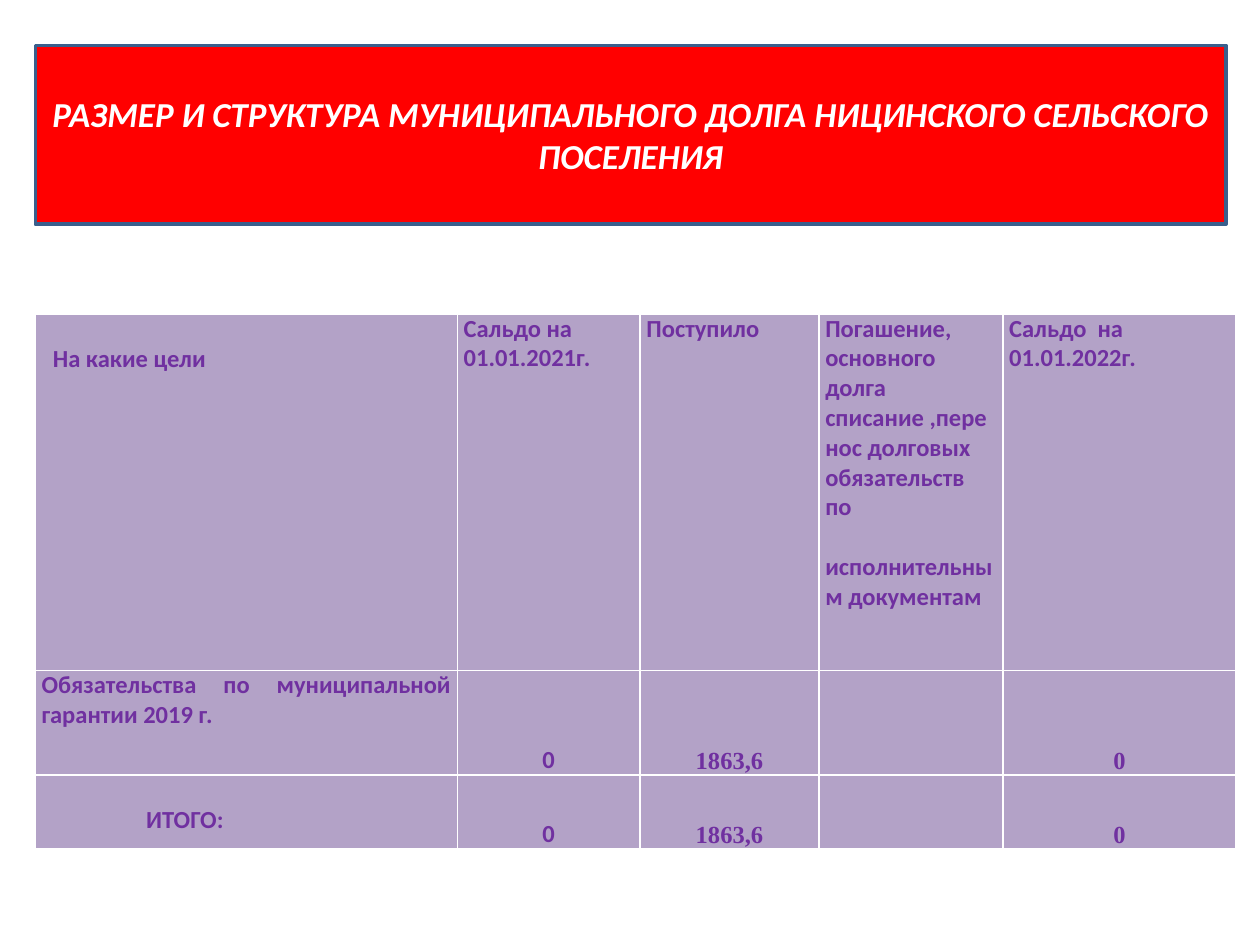
from dataclasses import dataclass

from lxml.etree import SubElement
from pptx import Presentation
from pptx.dml.color import RGBColor
from pptx.enum.text import MSO_ANCHOR as Anchor, MSO_AUTO_SIZE as AutoSize, PP_ALIGN as Align
from pptx.oxml.ns import qn
from pptx.util import Inches, Pt


@dataclass(frozen=True)
class Theme:
    banner: RGBColor = RGBColor(0xFF, 0x00, 0x00)
    banner_line: RGBColor = RGBColor(0x3A, 0x5F, 0x8C)
    white: RGBColor = RGBColor(0xFF, 0xFF, 0xFF)
    cell: RGBColor = RGBColor(0xB3, 0xA2, 0xC7)
    cell_text: RGBColor = RGBColor(0x70, 0x30, 0xA0)
    font: str = "Calibri"
    number_font: str = "Times New Roman"
    title_size: Pt = Pt(20)
    cell_size: Pt = Pt(14)
    blank_line: Pt = Pt(17)


@dataclass(frozen=True)
class Entry:
    """Content of one table cell; lead is the gap above, indent the gap at the left."""
    paragraphs: tuple[str, ...] = ()
    align: Align = Align.JUSTIFY
    anchor: Anchor = Anchor.TOP
    font: str = Theme.font
    lead: float = 0
    indent: float = 0
    gap: Pt = Pt(0)


THEME = Theme()
COLUMN_WIDTHS = (3.35, 1.45, 1.42, 1.46, 1.85)
ROW_HEIGHTS = (2.83, 0.83, 0.59)
LEFT = 0.28
CELL_MARGIN = 0.05


def amount(value: str, font: str = THEME.number_font) -> Entry:
    return Entry((value,), Align.CENTER, Anchor.BOTTOM, font)


AMOUNTS = (amount("0", THEME.font), amount("1863,6"), Entry(), amount("0"))
ROWS = (
    (
        Entry(("На какие цели",), lead=0.24, indent=0.09),
        Entry(("Сальдо на", "01.01.2021г.")),
        Entry(("Поступило",), Align.LEFT),
        Entry(("Погашение, основного долга списание ,перенос долговых обязательств по",
               "исполнительным документам"), Align.LEFT, gap=THEME.blank_line),
        Entry(("Сальдо  на", "01.01.2022г.")),
    ),
    (Entry(("Обязательства по муниципальной гарантии 2019 г.",)), *AMOUNTS),
    (Entry(("ИТОГО:",), lead=0.24, indent=0.83), *AMOUNTS),
)


def add_banner(slide) -> None:
    title = slide.shapes.title
    title.left, title.top = Inches(LEFT), Inches(0.36)
    title.width, title.height = Inches(9.45), Inches(1.42)
    title.fill.solid()
    title.fill.fore_color.rgb = THEME.banner
    title.line.color.rgb = THEME.banner_line
    title.line.width = Pt(2)
    frame = title.text_frame
    frame.text = "РАЗМЕР И СТРУКТУРА МУНИЦИПАЛЬНОГО ДОЛГА НИЦИНСКОГО СЕЛЬСКОГО ПОСЕЛЕНИЯ"
    frame.word_wrap = True
    frame.auto_size = AutoSize.NONE
    frame.vertical_anchor = Anchor.MIDDLE
    paragraph = frame.paragraphs[0]
    paragraph.alignment = Align.CENTER
    font = paragraph.font
    font.name, font.size = THEME.font, THEME.title_size
    font.bold = font.italic = True
    font.color.rgb = THEME.white


def set_borders(cell) -> None:
    properties = cell._tc.get_or_add_tcPr()
    for side in ("L", "R", "T", "B"):
        line = SubElement(properties, qn(f"a:ln{side}"), w=str(Pt(1)))
        fill = SubElement(line, qn("a:solidFill"))
        SubElement(fill, qn("a:srgbClr"), val=str(THEME.white))


def fill_cell(cell, entry: Entry) -> None:
    set_borders(cell)
    cell.fill.solid()
    cell.fill.fore_color.rgb = THEME.cell
    cell.margin_left = Inches(CELL_MARGIN + entry.indent)
    cell.margin_right = Inches(CELL_MARGIN)
    cell.margin_top, cell.margin_bottom = Inches(entry.lead), 0
    cell.vertical_anchor = entry.anchor
    cell.text = "\n".join(entry.paragraphs)
    for index, paragraph in enumerate(cell.text_frame.paragraphs):
        paragraph.alignment = entry.align
        if index:
            paragraph.space_before = entry.gap
        font = paragraph.font
        font.name, font.size, font.bold = entry.font, THEME.cell_size, True
        font.color.rgb = THEME.cell_text


def add_debt_table(slide) -> None:
    table = slide.shapes.add_table(
        len(ROWS), len(COLUMN_WIDTHS), Inches(LEFT), Inches(2.49),
        Inches(sum(COLUMN_WIDTHS)), Inches(sum(ROW_HEIGHTS))).table
    for column, width in zip(table.columns, COLUMN_WIDTHS):
        column.width = Inches(width)
    for row, height, entries in zip(table.rows, ROW_HEIGHTS, ROWS):
        row.height = Inches(height)
        for cell, entry in zip(row.cells, entries):
            fill_cell(cell, entry)


def main() -> None:
    presentation = Presentation()
    presentation.slide_width, presentation.slide_height = Inches(10), Inches(7.5)
    slide = presentation.slides.add_slide(presentation.slide_layouts.get_by_name("Title Only"))
    add_banner(slide)
    add_debt_table(slide)
    presentation.save("out.pptx")


if __name__ == "__main__":
    main()
